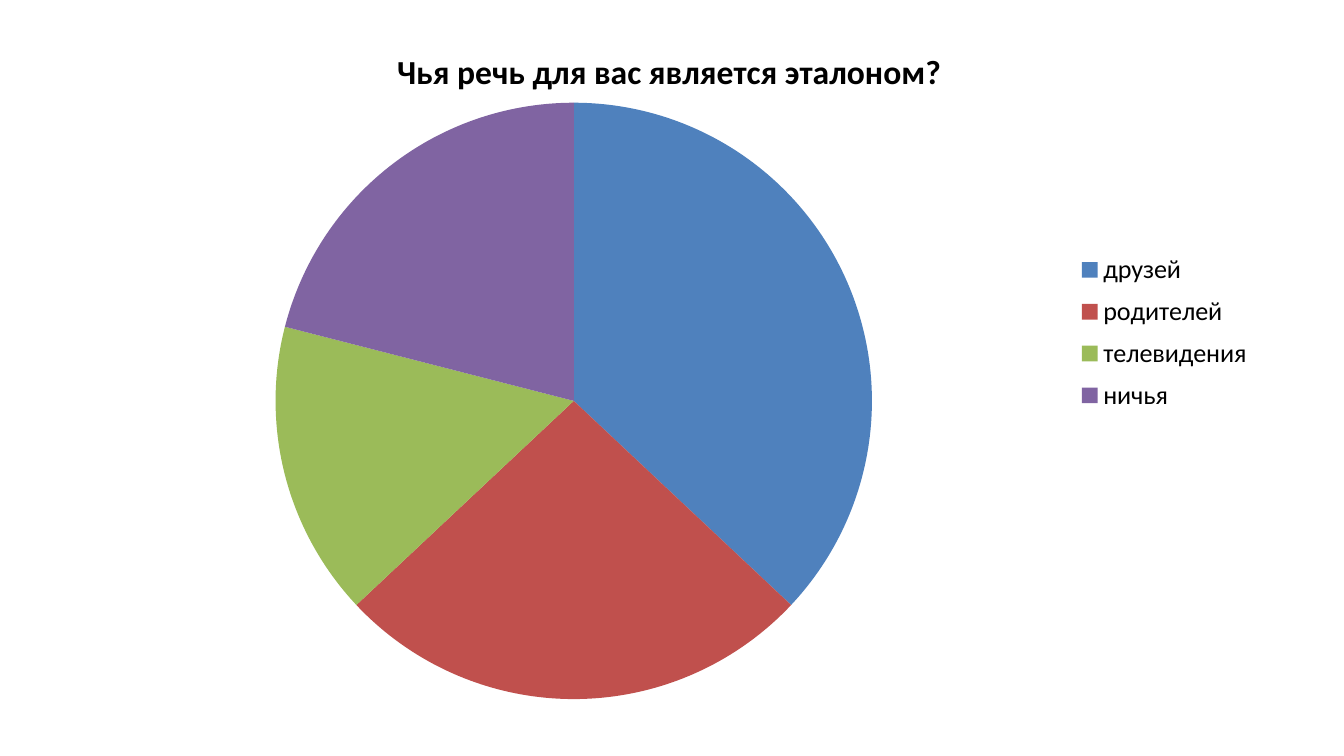
from lxml.etree import SubElement
from pptx import Presentation
from pptx.chart.data import CategoryChartData
from pptx.dml.color import RGBColor
from pptx.enum.chart import XL_CHART_TYPE as ChartType, XL_LEGEND_POSITION as LegendPosition
from pptx.oxml.ns import qn
from pptx.util import Emu, Pt

EMU_PER_PX = 9525
BLANK_LAYOUT = 6
QUESTION = "Чья речь для вас является эталоном?"
ANSWERS = [
    ("друзей", 37, "4F81BD"),
    ("родителей", 26, "C0504D"),
    ("телевидения", 16, "9BBB59"),
    ("ничья", 21, "8064A2"),
]


def px(length):
    return Emu(length * EMU_PER_PX)


def color(hex_string):
    return RGBColor.from_string(hex_string)


def place(layout, x, y, w, h, inner=False):
    """Fix a chart part by fractions of the chart's width and height."""
    for child in list(layout):
        layout.remove(child)
    manual = SubElement(layout, qn("c:manualLayout"))
    settings = [("layoutTarget", "inner")] if inner else []
    settings += [("xMode", "edge"), ("yMode", "edge"),
                 ("x", x), ("y", y), ("w", w), ("h", h)]
    for tag, value in settings:
        SubElement(manual, qn(f"c:{tag}")).set("val", str(value))


def layout_of(part, before):
    """Return the part's layout element, adding it ahead of the given child."""
    layout = part.find(qn("c:layout"))
    if layout is None:
        layout = SubElement(part, qn("c:layout"))
        part.find(qn(before)).addprevious(layout)
    return layout


class SlideBuilder:
    """Holds the style and the current slide."""

    font_name = "Calibri"
    text_color = "000000"

    def __init__(self, slide):
        self.slide = slide

    def style(self, font, size, bold=False):
        font.name = self.font_name
        font.size = Pt(size)
        font.bold = bold
        font.color.rgb = color(self.text_color)

    def background(self, fill_color):
        fill = self.slide.background.fill
        fill.solid()
        fill.fore_color.rgb = color(fill_color)

    def pie(self, title, answers, left, top, width, height):
        data = CategoryChartData()
        data.categories = [name for name, _, _ in answers]
        data.add_series(title, [share for _, share, _ in answers])
        chart = self.slide.shapes.add_chart(
            ChartType.PIE, px(left), px(top), px(width), px(height), data).chart
        self.style(chart.font, 10)

        chart.has_title = True
        heading = chart.chart_title.text_frame
        heading.text = title
        self.style(heading.paragraphs[0].font, 36, bold=True)
        chart.chart_title.include_in_layout = False

        plot = chart.plots[0]
        plot.vary_by_categories = True
        for index, (_, _, slice_color) in enumerate(answers):
            fill = plot.series[0].points[index].format.fill
            fill.solid()
            fill.fore_color.rgb = color(slice_color)

        chart.has_legend = True
        legend = chart.legend
        legend.position = LegendPosition.RIGHT
        legend.include_in_layout = False
        self.style(legend.font, 28)

        plot_area = chart.element.find(".//" + qn("c:plotArea"))
        legend_area = chart.element.find(".//" + qn("c:legend"))
        place(layout_of(plot_area, "c:pieChart"), 0.17, 0.11, 0.5, 0.88, inner=True)
        place(layout_of(legend_area, "c:overlay"), 0.84, 0.32, 0.15, 0.26)


def main():
    deck = Presentation()
    deck.slide_width, deck.slide_height = px(1920), px(1080)
    builder = SlideBuilder(deck.slides.add_slide(deck.slide_layouts[BLANK_LAYOUT]))
    builder.background("FFFFFF")
    builder.pie(QUESTION, ANSWERS, left=104, top=36, width=1704, height=976)
    deck.save("out.pptx")


if __name__ == "__main__":
    main()
